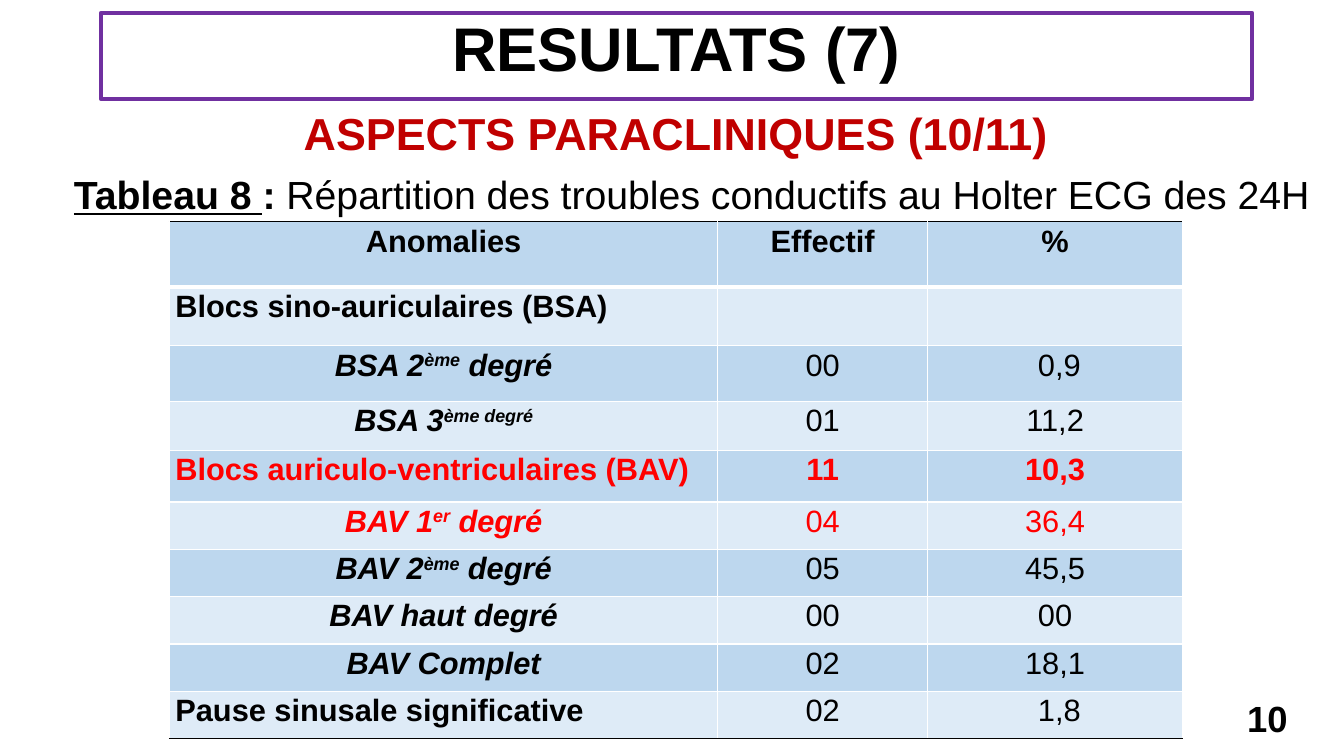
from lxml.etree import SubElement as Sub
from pptx import Presentation as Deck
from pptx.dml.color import RGBColor as Rgb
from pptx.enum.shapes import MSO_SHAPE as Kind
from pptx.enum.text import MSO_ANCHOR as Anchor, PP_ALIGN as Align
from pptx.oxml.ns import qn
from pptx.util import Emu, Pt

PX = 9144
BLACK = Rgb(0x00, 0x00, 0x00)
WHITE = Rgb(0xFF, 0xFF, 0xFF)
RED = Rgb(0xFF, 0x00, 0x00)
DARK = Rgb(0xC0, 0x00, 0x00)
PURPLE = Rgb(0x70, 0x30, 0xA0)
BLUE = Rgb(0xBD, 0xD7, 0xEE)
PALE = Rgb(0xDE, 0xEB, 0xF7)

COLS = [544, 208, 253]
HEIGHTS = [65, 58, 55, 49, 51] + [47] * 5
ROWS = [
    ("head", BLACK, "Anomalies", "Effectif", "%"),
    ("group", BLACK, "Blocs sino-auriculaires (BSA)", "", ""),
    ("item", BLACK, "BSA 2^ème^ degré", "00", " 0,9"),
    ("item", BLACK, "BSA 3^ème degré", "01", "11,2"),
    ("total", RED, "Blocs auriculo-ventriculaires (BAV)", "11", "10,3"),
    ("item", RED, "BAV 1^er^ degré", "04", "36,4"),
    ("item", BLACK, "BAV 2^ème^ degré", "05", "45,5"),
    ("item", BLACK, "BAV haut degré", "00", "00"),
    ("item", BLACK, "BAV Complet", "02", "18,1"),
    ("group", BLACK, "Pause sinusale significative", "02", " 1,8"),
]


def px(*nums):
    return [Emu(n * PX) for n in nums]


def apply(obj, vals):
    for name, val in vals.items():
        setattr(obj, name, val)


class Page:
    font = "Arial"

    def __init__(self, deck):
        self.slide = deck.slides.add_slide(deck.slide_layouts[6])

    def run(self, para, text, size, color=BLACK, **form):
        run = para.add_run()
        run.text = text
        apply(run.font, {"name": self.font, "size": Pt(size), **form})
        run.font.color.rgb = color
        return run

    def text(self, box, parts, size, color=BLACK, align=Align.CENTER,
             anchor=Anchor.TOP, space=1.0):
        frame = self.slide.shapes.add_textbox(*px(*box)).text_frame
        self.fill(frame, parts, size, color, align, anchor, space)

    def fill(self, frame, parts, size, color, align, anchor, space):
        apply(frame, {"word_wrap": True, "vertical_anchor": anchor})
        para = frame.paragraphs[0]
        apply(para, {"alignment": align, "line_spacing": space})
        for text, form in parts:
            self.run(para, text, size, color, **form)

    def banner(self, box, text, size):
        rect = self.slide.shapes.add_shape(Kind.RECTANGLE, *px(*box))
        rect.shadow.inherit = False
        rect.fill.background()
        rect.line.color.rgb = PURPLE
        rect.line.width = Pt(3)
        self.fill(rect.text_frame, [(text, {"bold": True})], size, BLACK,
                  Align.CENTER, Anchor.TOP, 0.9)

    def edge(self, cell, side, color, width):
        line = Sub(cell._tc.get_or_add_tcPr(), qn("a:ln" + side), w=str(Pt(width)))
        paint = Sub(line, qn("a:solidFill"))
        Sub(paint, qn("a:srgbClr"), val=str(color))

    def cell(self, cell, text, tint, align, color, edges, **form):
        pad = Emu(6 * PX)
        apply(cell, {"margin_left": pad, "margin_right": pad,
                     "margin_top": 0, "margin_bottom": 0})
        for side, (ink, width) in edges.items():
            self.edge(cell, side, ink, width)
        cell.fill.solid()
        cell.fill.fore_color.rgb = tint
        para = cell.text_frame.paragraphs[0]
        apply(para, {"alignment": align, "line_spacing": 1.07})
        for k, part in enumerate(text.split("^")):
            if part:
                run = self.run(para, part, 22, color, **form)
                if k % 2:
                    run._r.get_or_add_rPr().set("baseline", "30000")

    def table(self, left, top):
        size = px(left, top, sum(COLS), sum(HEIGHTS))
        grid = self.slide.shapes.add_table(len(ROWS), len(COLS), *size).table
        apply(grid, {"first_row": False, "horz_banding": False})
        for col, wide in zip(grid.columns, px(*COLS)):
            col.width = wide
        for row, high in zip(grid.rows, px(*HEIGHTS)):
            row.height = high
        last = len(ROWS) - 1
        rules = {0: (BLACK, 1), 1: (WHITE, 3), last + 1: (BLACK, 1)}
        thin = (WHITE, 1)
        for r, (kind, color, *texts) in enumerate(ROWS):
            edges = {"L": thin, "R": thin, "T": rules.get(r, thin),
                     "B": rules.get(r + 1, thin)}
            for c, text in enumerate(texts):
                first = c == 0
                flush = first and kind in ("group", "total")
                self.cell(grid.cell(r, c), text, PALE if r % 2 else BLUE,
                          Align.LEFT if flush else Align.CENTER, color, edges,
                          bold=first or kind in ("head", "total"),
                          italic=first and kind == "item")


def main():
    deck = Deck()
    deck.slide_width, deck.slide_height = px(1333, 750)
    page = Page(deck)
    bold = {"bold": True}
    page.text((987, 692, 300, 40), [("10", bold)], 26,
              align=Align.RIGHT, anchor=Anchor.MIDDLE)
    page.table(168, 220)
    page.text((18, 164, 1336, 57), [
        ("Tableau 8 ", {"bold": True, "underline": True}),
        (": ", bold),
        ("Répartition des troubles conductifs au Holter ECG des 24H", {}),
    ], 28)
    page.banner((100, 13, 1142, 85), "RESULTATS (7)", 44)
    page.text((147, 100, 1047, 64), [("ASPECTS PARACLINIQUES (10/11)", bold)],
              32, DARK, anchor=Anchor.MIDDLE)
    deck.save("out.pptx")


if __name__ == "__main__":
    main()
